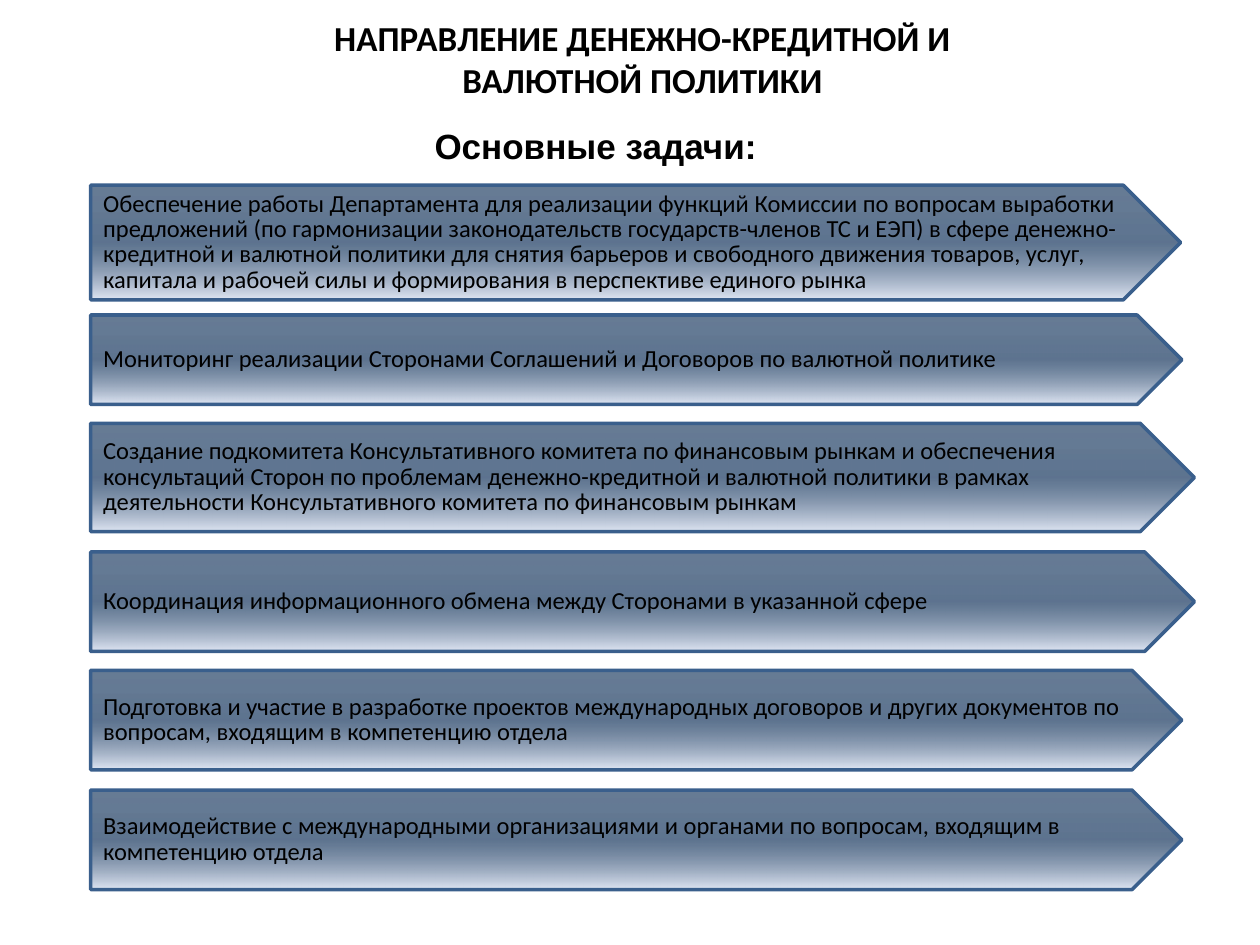
from dataclasses import dataclass

from lxml import etree
from pptx import Presentation
from pptx import util as u
from pptx.dml.color import RGBColor
from pptx.enum import shapes, text
from pptx.oxml import ns

INK = RGBColor(0x00, 0x00, 0x00)
NAVY = RGBColor(0x17, 0x37, 0x5E)
PALE = RGBColor(0xE1, 0xE8, 0xF5)
EDGE = RGBColor(0x3A, 0x5F, 0x8C)

# Grid of square cells over the whole slide
COLS, ROWS = 100, 75
WIDE, HIGH = u.Inches(10), u.Inches(7.5)
LEFT = 7.2
# Gradient stops: place, colour, opacity (all but colour in percent)
STOPS = ((0, NAVY, 65), (50, NAVY, 69), (100, PALE, 100))


@dataclass
class Box:
    col: float
    row: float
    cols: float
    rows: float

    def place(self) -> tuple[int, int, int, int]:
        return (int(WIDE * self.col / COLS), int(HIGH * self.row / ROWS),
                int(WIDE * self.cols / COLS), int(HIGH * self.rows / ROWS))


@dataclass
class Task:
    row: float
    cols: float
    rows: float
    words: str


TASKS = [
    Task(14.7, 86.5, 9.1,
         "Обеспечение работы Департамента для реализации функций Комиссии по "
         "вопросам выработки предложений (по гармонизации законодательств "
         "государств-членов ТС и ЕЭП) в сфере денежно-кредитной и валютной "
         "политики для снятия барьеров и свободного движения товаров, услуг, "
         "капитала и рабочей силы и формирования в перспективе единого рынка"),
    Task(25, 86.6, 7.1,
         "Мониторинг реализации Сторонами Соглашений и Договоров по валютной "
         "политике"),
    Task(33.6, 87.6, 8.6,
         "Создание подкомитета Консультативного комитета по финансовым рынкам и "
         "обеспечения консультаций Сторон по проблемам денежно-кредитной и "
         "валютной политики в рамках деятельности Консультативного комитета по "
         "финансовым рынкам"),
    Task(43.8, 87.6, 7.9,
         "Координация информационного обмена между Сторонами в указанной сфере"),
    Task(53.2, 86.6, 7.9,
         "Подготовка и участие в разработке проектов международных договоров и "
         "других документов по вопросам, входящим в компетенцию отдела"),
    Task(62.7, 86.6, 7.9,
         "Взаимодействие с международными организациями и органами по вопросам, "
         "входящим в компетенцию отдела"),
]


def write(frame, words: str, size: int, font: str = "Calibri", bold: bool = False,
          align=text.PP_ALIGN.LEFT, tight: bool = True) -> None:
    frame.word_wrap = True
    para = frame.paragraphs[0]
    para.alignment = align
    if tight:
        para.line_spacing = u.Pt(14.4)
        para.space_after = u.Pt(2)
    run = para.add_run()
    run.text = words
    run.font.name = font
    run.font.size = u.Pt(size)
    run.font.bold = bold
    run.font.color.rgb = INK


def shade(shape) -> None:
    """Fill from top to bottom with the three part-clear stops."""
    shape.fill.gradient()
    grad = shape.fill._fill._gradFill
    for part in list(grad):
        grad.remove(part)
    stops = etree.SubElement(grad, ns.qn("a:gsLst"))
    for pos, tone, alpha in STOPS:
        stop = etree.SubElement(stops, ns.qn("a:gs"), pos=str(pos * 1000))
        clr = etree.SubElement(stop, ns.qn("a:srgbClr"), val=str(tone))
        if alpha < 100:
            etree.SubElement(clr, ns.qn("a:alpha"), val=str(alpha * 1000))
    etree.SubElement(grad, ns.qn("a:lin"), ang=str(90 * 60000), scaled="0")


def label(slide, box: Box, words: str, **look) -> None:
    frame = slide.shapes.add_textbox(*box.place()).text_frame
    write(frame, words, 20, bold=True, **look)
    frame.auto_size = text.MSO_AUTO_SIZE.SHAPE_TO_FIT_TEXT


def arrow(slide, task: Task) -> None:
    box = Box(LEFT, task.row, task.cols, task.rows)
    shape = slide.shapes.add_shape(shapes.MSO_SHAPE.PENTAGON, *box.place())
    shape.shadow.inherit = False
    shade(shape)
    shape.line.color.rgb = EDGE
    shape.line.width = u.Pt(2)
    shape.text_frame.vertical_anchor = text.MSO_ANCHOR.MIDDLE
    write(shape.text_frame, task.words, 14)


def main() -> None:
    deck = Presentation()
    deck.slide_width, deck.slide_height = WIDE, HIGH
    slide = deck.slides.add_slide(deck.slide_layouts[6])

    # Headings
    label(slide, Box(19.5, 0.8, 63, 7.7),
          "НАПРАВЛЕНИЕ ДЕНЕЖНО-КРЕДИТНОЙ И ВАЛЮТНОЙ ПОЛИТИКИ",
          align=text.PP_ALIGN.CENTER, tight=False)
    label(slide, Box(33.5, 10.7, 65.5, 3.1), "Основные задачи:", font="Arial")

    # Task arrows
    for task in TASKS:
        arrow(slide, task)

    deck.save("out.pptx")


if __name__ == "__main__":
    main()
